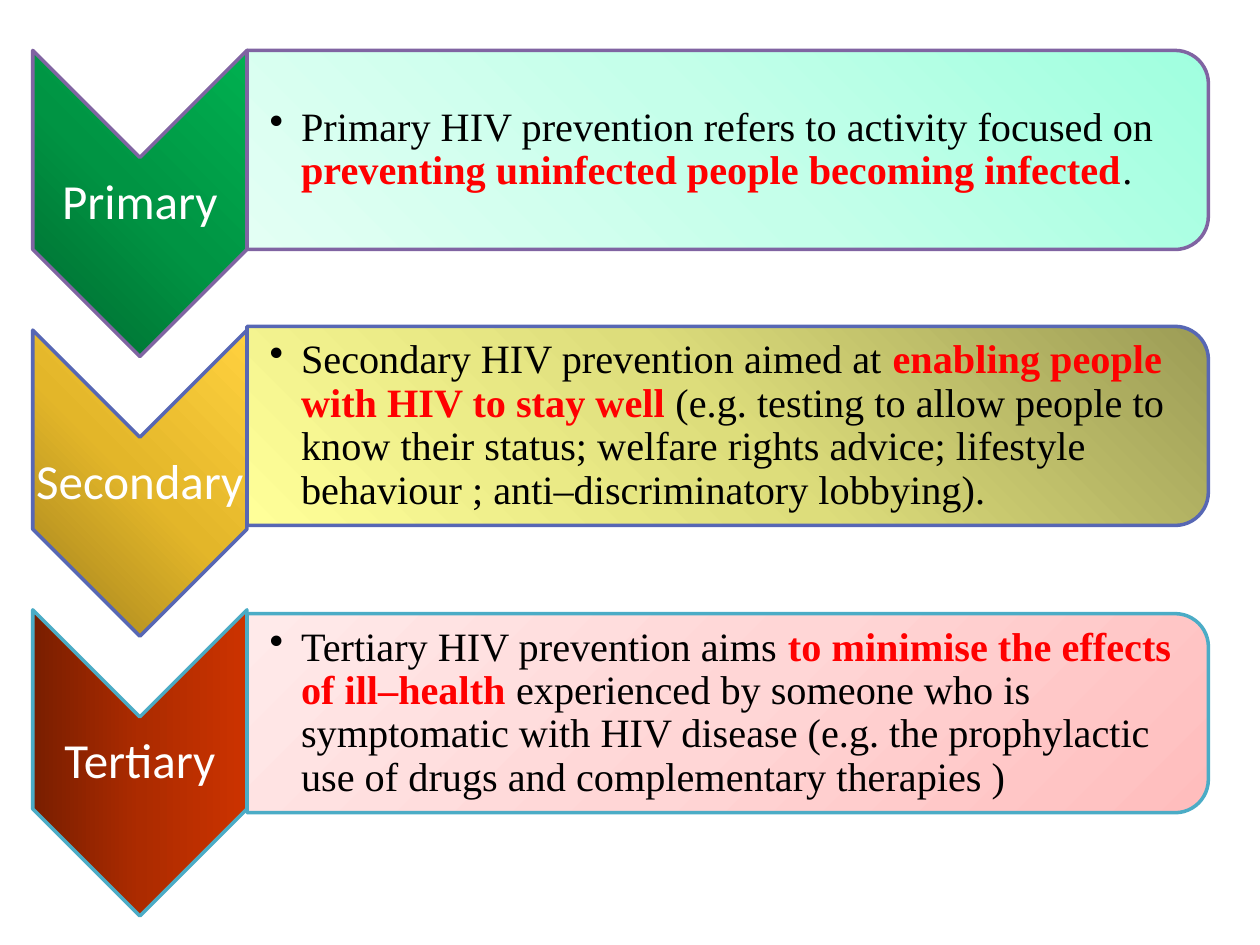
from lxml import etree
from pptx import Presentation
from pptx.dml.color import RGBColor
from pptx.enum import shapes, text
from pptx.oxml.ns import qn
from pptx.util import Inches, Pt

THEME = {
    "label_font": "Calibri", "label_size": 28, "label_color": "FFFFFF",
    "body_font": "Times New Roman", "body_size": 23, "body_color": "000000",
    "key_color": "FF0000", "line_width": 2,
}

# Body runs alternate plain, key phrase, plain.
LEVELS = [
    {"label": "Primary", "line": "8064A2",
     "body": ("Primary HIV prevention refers to activity focused on ",
              "preventing uninfected people becoming infected", "."),
     "chevron": ("00682F", "009443", "00B050"), "angle": 225,
     "panel": ("A0FFDF", "C5FFEA", "E3FFF4"), "corner": "top", "shift": 0},
    {"label": "Secondary", "line": "5767B4",
     "body": ("Secondary HIV prevention aimed at ",
              "enabling people with HIV to stay well",
              " (e.g. testing to allow people to know their status; welfare rights advice; "
              "lifestyle behaviour ; anti–discriminatory lobbying)."),
     "chevron": ("A0801D", "E3B629", "FFD13F"), "angle": 225,
     "panel": ("9C9C56", "DDDD7B", "FFFF99"), "corner": "top", "shift": -0.03},
    {"label": "Tertiary", "line": "4BACC6",
     "body": ("Tertiary HIV prevention aims ",
              "to minimise the effects of ill–health",
              " experienced by someone who is symptomatic with HIV disease "
              "(e.g. the prophylactic use of drugs and complementary therapies )"),
     "chevron": ("791E00", "AC2B00", "CC3300"), "angle": 270,
     "panel": ("FFBDBD", "FFD6D6", "FFEAEA"), "corner": "bottom", "shift": 0.03},
]

LEFT, TOP, PITCH = 0.26, 0.4, 2.22
CHEVRON_WIDTH, CHEVRON_HEIGHT = 1.7, 2.43
PANEL_WIDTH, PANEL_HEIGHT = 7.63, 1.58
LABEL_HEIGHT = CHEVRON_HEIGHT - CHEVRON_WIDTH
BODY_WIDTH, BODY_HEIGHT = 7.56, 1.42


def child(parent, tag, **attributes):
    return etree.SubElement(parent, qn(tag), {k: str(v) for k, v in attributes.items()})


def set_gradient(shape, colors, angle=None, corner=None):
    """Fill with evenly spaced stops, along an angle or out from a right-hand corner."""
    shape.fill.gradient()
    gradient = shape._element.spPr.find(qn("a:gradFill"))
    for element in list(gradient):
        gradient.remove(element)
    gradient.set("rotWithShape", "1")
    stops = child(gradient, "a:gsLst")
    for index, color in enumerate(colors):
        stop = child(stops, "a:gs", pos=index * 50000)
        child(stop, "a:srgbClr", val=color)
    if corner:
        edge = "b" if corner == "top" else "t"
        focus = child(gradient, "a:path", path="circle")
        child(focus, "a:fillToRect", l=100000, **{edge: 100000})
    else:
        child(gradient, "a:lin", ang=angle * 60000, scaled=0)


def add_turned_shape(group, kind, left, top, width, height, line, colors, **gradient):
    """Add a shape turned by 90 degrees that covers the given upright area."""
    inset = (width - height) / 2
    shape = group.shapes.add_shape(kind, Inches(left + inset), Inches(top - inset),
                                   Inches(height), Inches(width))
    shape.rotation = 90
    shape.shadow.inherit = False
    set_gradient(shape, colors, **gradient)
    shape.line.color.rgb = RGBColor.from_string(line)
    shape.line.width = Pt(THEME["line_width"])


def add_text(group, runs, left, top, width, height, *, font, size, color,
             key_color=None, align=None, inset=0.02, bullet=False):
    """Add one paragraph; every second run is a bold key phrase."""
    box = group.shapes.add_textbox(Inches(left), Inches(top), Inches(width), Inches(height))
    frame = box.text_frame
    frame.word_wrap = True
    frame.vertical_anchor = text.MSO_ANCHOR.MIDDLE
    frame.margin_left = Inches(inset)
    frame.margin_top = frame.margin_right = frame.margin_bottom = Inches(0.02)
    paragraph = frame.paragraphs[0]
    paragraph.alignment = align
    paragraph.line_spacing = 0.9
    if bullet:
        paragraph.level = 1
        properties = paragraph._p.get_or_add_pPr()
        properties.set("marL", str(Inches(0.25)))
        properties.set("indent", str(Inches(-0.25)))
        child(properties, "a:buChar", char="•")
    for index, words in enumerate(runs):
        is_key = index % 2 == 1
        run = paragraph.add_run()
        run.text = words
        run.font.name = font
        run.font.size = Pt(size)
        run.font.bold = is_key
        run.font.color.rgb = RGBColor.from_string(key_color if is_key else color)


def add_level(group, level, top):
    line = level["line"]
    add_turned_shape(group, shapes.MSO_SHAPE.CHEVRON, LEFT, top, CHEVRON_WIDTH,
                     CHEVRON_HEIGHT, line, level["chevron"], angle=level["angle"])
    add_text(group, [level["label"]], LEFT, top + CHEVRON_WIDTH / 2, CHEVRON_WIDTH,
             LABEL_HEIGHT, font=THEME["label_font"], size=THEME["label_size"],
             color=THEME["label_color"], align=text.PP_ALIGN.CENTER)
    panel_left, panel_top = LEFT + CHEVRON_WIDTH, top + level["shift"]
    add_turned_shape(group, shapes.MSO_SHAPE.ROUND_2_SAME_RECTANGLE, panel_left, panel_top,
                     PANEL_WIDTH, PANEL_HEIGHT, line, level["panel"], corner=level["corner"])
    add_text(group, level["body"], panel_left, panel_top + (PANEL_HEIGHT - BODY_HEIGHT) / 2,
             BODY_WIDTH, BODY_HEIGHT, font=THEME["body_font"], size=THEME["body_size"],
             color=THEME["body_color"], key_color=THEME["key_color"], inset=0.18, bullet=True)


def main():
    presentation = Presentation()
    presentation.slide_width, presentation.slide_height = Inches(10), Inches(7.5)
    slide = presentation.slides.add_slide(presentation.slide_layouts[6])
    group = slide.shapes.add_group_shape()
    for index, level in enumerate(LEVELS):
        add_level(group, level, TOP + index * PITCH)
    presentation.save("out.pptx")


if __name__ == "__main__":
    main()
